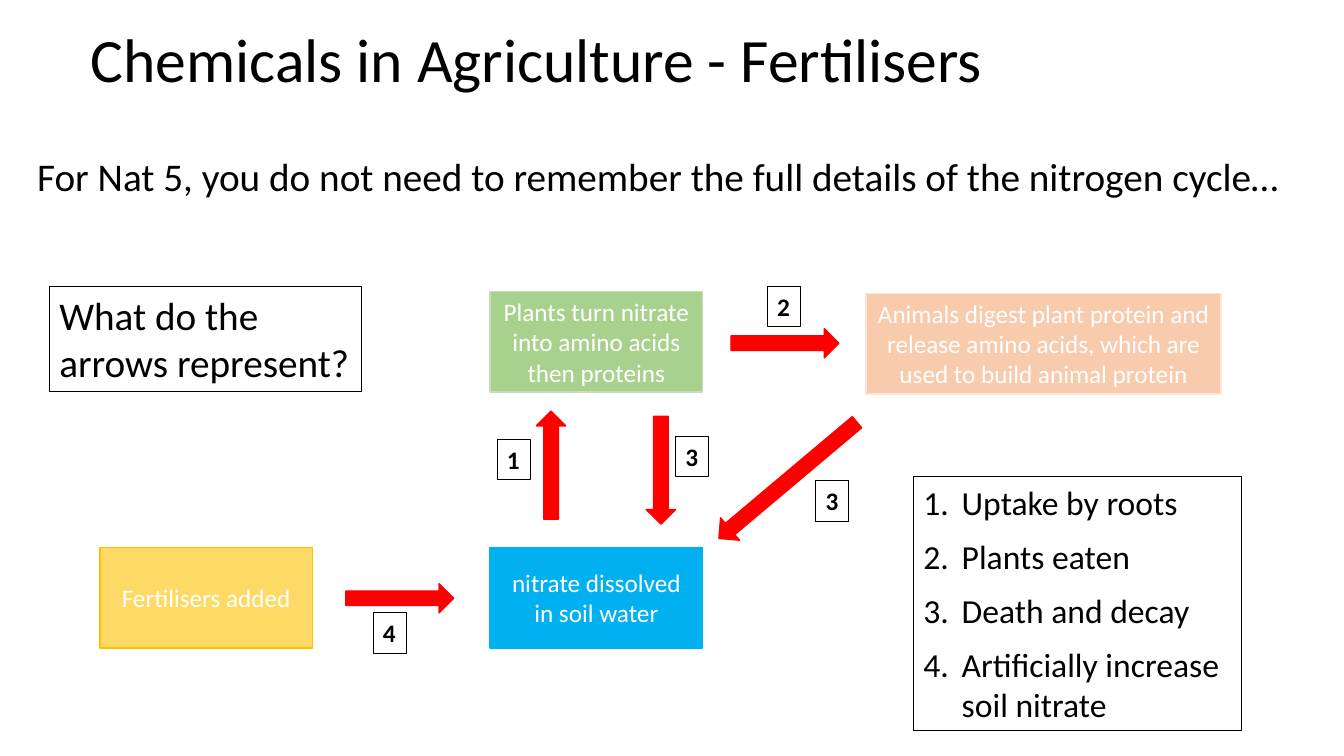
import pptx
import pptx.util
import pptx.dml.color
import pptx.enum.shapes
import pptx.enum.text
import lxml.etree

RGB = pptx.dml.color.RGBColor
SHAPE = pptx.enum.shapes.MSO_SHAPE
ANCHOR = pptx.enum.text.MSO_ANCHOR
ALIGN = pptx.enum.text.PP_ALIGN
FIT = pptx.enum.text.MSO_AUTO_SIZE
Pt = pptx.util.Pt

PX = 9144
BLACK = RGB(0x00, 0x00, 0x00)
WHITE = RGB(0xFF, 0xFF, 0xFF)
RED = RGB(0xFF, 0x00, 0x00)
BLUE = RGB(0x00, 0xB0, 0xF0)
GREEN = RGB(0xA9, 0xD1, 0x8E)
PALE_GREEN = RGB(0xC5, 0xE0, 0xB4)
PEACH = RGB(0xF8, 0xCB, 0xAD)
PALE_PEACH = RGB(0xFB, 0xE5, 0xD6)
YELLOW = RGB(0xFF, 0xD9, 0x66)
GOLD = RGB(0xFF, 0xC0, 0x00)

STAGE_H = 100
ARROW_W = 29
LABEL_W, LABEL_H = 33, 40

STAGES = [
    (387, 259, 211, "nitrate dissolved in soil water", BLUE, BLUE),
    (387, 5, 211, "Plants turn nitrate into amino acids then proteins", GREEN, PALE_GREEN),
    (760, 7, 352, "Animals digest plant protein and release amino acids, "
     "which are used to build animal protein", PEACH, PALE_PEACH),
    (0, 259, 211, "Fertilisers added", YELLOW, GOLD),
]
ARROWS = [
    (433, 124, 107, 0),
    (542, 129, 107, 180),
    (668, 103, 179, 229.9),
    (665, 3, 107, 90),
    (283, 256, 107, 90),
]
LABELS = [(662, 0, "2"), (394, 152, "1"), (271, 324, "4"), (710, 193, "3"), (571, 149, "3")]
ANSWERS = ["Uptake by roots", "Plants eaten", "Death and decay",
           "Artificially increase soil nitrate"]


def set_format(obj, values):
    """Set every attribute in a dict of format values."""
    for name, value in values.items():
        setattr(obj, name, value)


def write(sp, lines, font, para=None, frame=None):
    """Write lines as paragraphs into a shape and return the paragraphs."""
    tf = sp.text_frame
    set_format(tf, {"word_wrap": True, "vertical_anchor": ANCHOR.TOP, **(frame or {})})
    for i, line in enumerate(lines):
        p = tf.paragraphs[0] if i == 0 else tf.add_paragraph()
        set_format(p, {"alignment": ALIGN.LEFT, **(para or {})})
        r = p.add_run()
        r.text = line
        set_format(r.font, {"name": "Calibri", **font})
        r.font.color.rgb = font_color(sp)
    return tf.paragraphs


def font_color(sp):
    """Choose white text on filled shapes and black text elsewhere."""
    return WHITE if sp.fill.type == pptx.enum.dml.MSO_FILL.SOLID else BLACK


def add_shape(s, kind, box, fill=None, line=BLACK, width=0.75):
    """Add a flat shape with an optional fill and an outline."""
    sp = s.shapes.add_shape(kind, *(v * PX for v in box))
    sp.shadow.inherit = False
    if fill is None:
        sp.fill.background()
    else:
        sp.fill.solid()
        sp.fill.fore_color.rgb = fill
    sp.line.color.rgb = line
    sp.line.width = Pt(width)
    return sp


def add_heading(s, box, text, size, para=None, frame=None):
    """Add a plain line of heading text."""
    sp = s.shapes.add_textbox(*(v * PX for v in box))
    write(sp, [text], {"size": Pt(size)}, para, frame)


def add_cycle(s, left, top):
    """Draw the nitrogen cycle from its top left corner."""
    for x, y, w, text, fill, line in STAGES:
        sp = add_shape(s, SHAPE.RECTANGLE, (left + x, top + y, w, STAGE_H), fill, line, 1)
        write(sp, [text], {"size": Pt(18)}, {"alignment": ALIGN.CENTER},
              {"vertical_anchor": ANCHOR.MIDDLE})
    for x, y, length, angle in ARROWS:
        sp = add_shape(s, SHAPE.UP_ARROW, (left + x, top + y, ARROW_W, length), RED, RED, 1)
        sp.rotation = angle
    for x, y, text in LABELS:
        sp = add_shape(s, SHAPE.RECTANGLE, (left + x, top + y, LABEL_W, LABEL_H))
        write(sp, [text], {"size": Pt(18), "bold": True},
              frame={"word_wrap": False, "auto_size": FIT.SHAPE_TO_FIT_TEXT})


def add_question(s, box):
    """Add the framed question."""
    sp = add_shape(s, SHAPE.RECTANGLE, box)
    write(sp, ["What do the arrows represent?"], {"size": Pt(28)},
          frame={"auto_size": FIT.SHAPE_TO_FIT_TEXT})


def add_answers(s, box):
    """Add the framed numbered list of answers."""
    sp = add_shape(s, SHAPE.RECTANGLE, box)
    paragraphs = write(sp, ANSWERS, {"size": Pt(24)},
                       frame={"auto_size": FIT.SHAPE_TO_FIT_TEXT})
    for i, p in enumerate(paragraphs):
        p.space_before = Pt(9.76 if i else 0)
        pPr = p._p.get_or_add_pPr()
        pPr.set("marL", str(38 * PX))
        pPr.set("indent", str(-38 * PX))
        number = lxml.etree.SubElement(pPr, pptx.oxml.ns.qn("a:buAutoNum"))
        number.set("type", "arabicPeriod")


def main():
    """Build and save the slide."""
    prs = pptx.Presentation()
    prs.slide_width, prs.slide_height = 1333 * PX, 750 * PX
    s = prs.slides.add_slide(prs.slide_layouts[6])
    add_heading(s, (80, -10, 1150, 145), "Chemicals in Agriculture - Fertilisers", 44,
                {"line_spacing": 0.9}, {"vertical_anchor": ANCHOR.MIDDLE})
    add_heading(s, (27, 146, 1285, 57), "For Nat 5, you do not need to remember "
                "the full details of the nitrogen cycle…", 28,
                frame={"auto_size": FIT.SHAPE_TO_FIT_TEXT})
    add_cycle(s, 99, 284)
    add_answers(s, (906, 473, 325, 252))
    add_question(s, (49, 284, 310, 104))
    prs.save("out.pptx")


if __name__ == "__main__":
    main()
